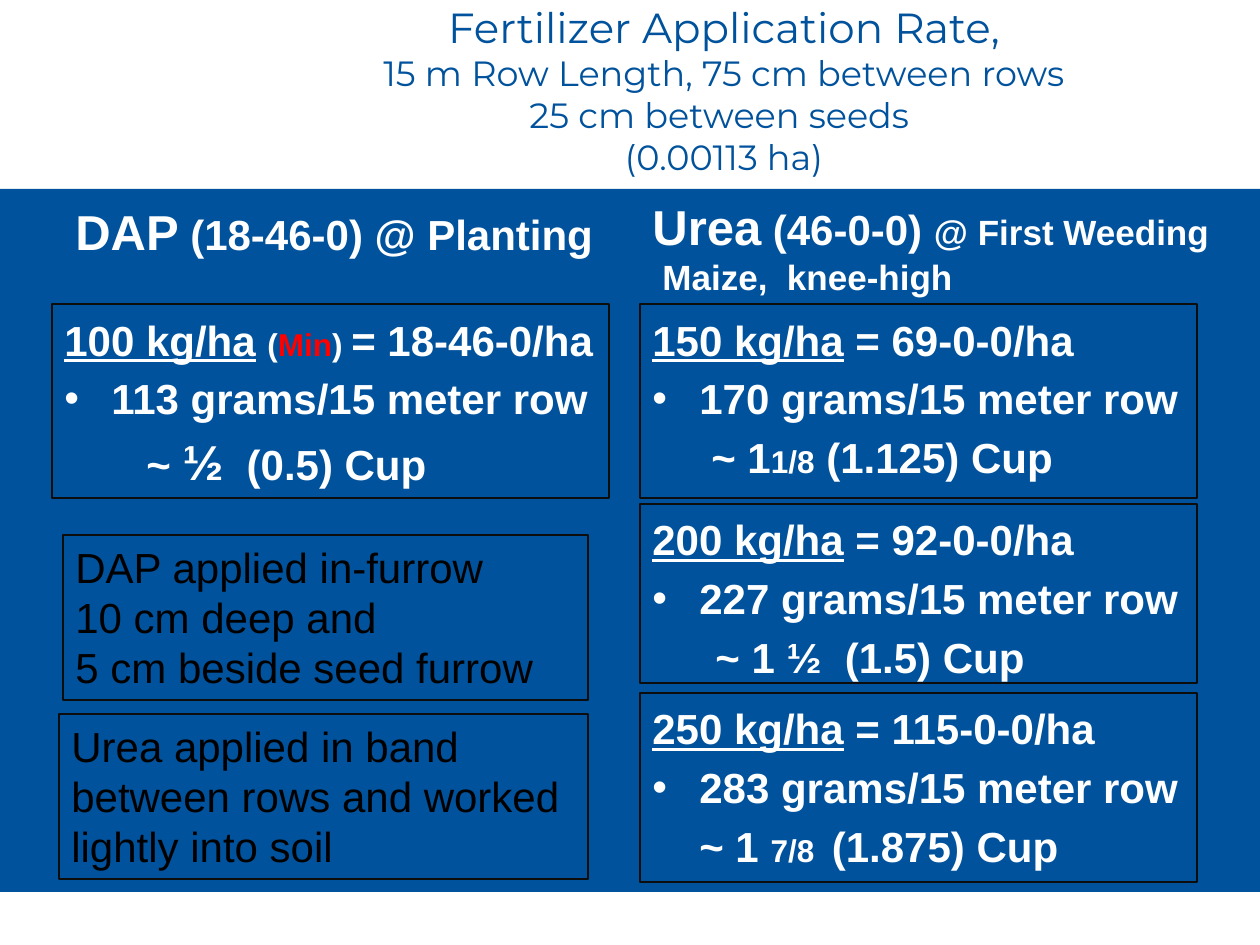
from dataclasses import dataclass

from lxml import etree
from pptx import Presentation, util as u
from pptx.dml.color import RGBColor
from pptx.enum import shapes, text
from pptx.oxml.ns import qn

PX = 914400 / 126


@dataclass(frozen=True)
class Theme:
    blue: str = "00529C"
    white: str = "FFFFFF"
    black: str = "000000"
    red: str = "FF0000"
    outline: str = "0D0D0D"
    title_font: str = "Montserrat"
    body_font: str = "Arial"
    large: int = 28
    normal: int = 24
    medium: int = 20
    small: int = 18
    gap: float = 4.8


THEME = Theme()
HANG = 47


def px(length):
    return u.Emu(round(length * PX))


def write(paragraph, wording, size=THEME.normal, color=THEME.white, **font_format):
    run = paragraph.add_run()
    run.text = wording
    run.font.color.rgb = RGBColor.from_string(color)
    font_values = {"name": THEME.body_font, "bold": True, "size": u.Pt(size)} | font_format
    for key, value in font_values.items():
        setattr(run.font, key, value)


def indent(paragraph, left, first=0, bullet=None):
    properties = paragraph._p.get_or_add_pPr()
    properties.set("marL", str(px(left)))
    properties.set("indent", str(px(first)))
    if bullet:
        color = etree.SubElement(etree.SubElement(properties, qn("a:buClr")), qn("a:srgbClr"))
        color.set("val", THEME.white)
        etree.SubElement(properties, qn("a:buFont")).set("typeface", THEME.body_font)
        etree.SubElement(properties, qn("a:buChar")).set("char", bullet)


def set_frame(frame, anchor):
    frame_values = {"word_wrap": True, "auto_size": text.MSO_AUTO_SIZE.NONE,
                    "vertical_anchor": anchor}
    for key, value in frame_values.items():
        setattr(frame, key, value)


def add_panel(slide, box, fill=None, line=None):
    panel = slide.shapes.add_shape(shapes.MSO_SHAPE.RECTANGLE, *map(px, box))
    panel.shadow.inherit = False
    if fill:
        panel.fill.solid()
        panel.fill.fore_color.rgb = RGBColor.from_string(fill)
    else:
        panel.fill.background()
    if line:
        panel.line.color.rgb = RGBColor.from_string(line)
        panel.line.width = u.Pt(0.75)
    else:
        panel.line.fill.background()
    set_frame(panel.text_frame, text.MSO_ANCHOR.TOP)
    return panel


def add_paragraphs(frame, count, gap=0):
    """Return count left-aligned paragraphs, with gap points between them."""
    paragraphs = [frame.paragraphs[0]] + [frame.add_paragraph() for _ in range(count - 1)]
    for position, paragraph in enumerate(paragraphs):
        paragraph.alignment = text.PP_ALIGN.LEFT
        paragraph.space_before = u.Pt(gap if position else 0)
    return paragraphs


def add_title(slide, box, heading, details):
    title = slide.shapes.title
    title.left, title.top, title.width, title.height = map(px, box)
    set_frame(title.text_frame, text.MSO_ANCHOR.MIDDLE)
    paragraph = title.text_frame.paragraphs[0]
    paragraph.alignment = text.PP_ALIGN.CENTER
    style = {"color": THEME.blue, "name": THEME.title_font, "bold": False}
    write(paragraph, heading, **style)
    for detail in details:
        paragraph.add_line_break()
        write(paragraph, detail, THEME.medium, **style)


def add_column_heading(slide, box, lines):
    frame = slide.shapes.add_textbox(*map(px, box)).text_frame
    set_frame(frame, text.MSO_ANCHOR.BOTTOM)
    for position, (paragraph, runs) in enumerate(zip(add_paragraphs(frame, len(lines)), lines)):
        indent(paragraph, 10 * position)
        for run in runs:
            write(paragraph, *run)


def add_rate_card(slide, box, rate, analysis, dose, cups, cup_indent):
    """Outlined card: underlined rate, bulleted dose, indented cup measure."""
    frame = add_panel(slide, box, line=THEME.outline).text_frame
    frame.margin_top = px(10)
    rate_line, dose_line, cup_line = add_paragraphs(frame, 3, THEME.gap)
    indent(rate_line, HANG, -HANG)
    write(rate_line, rate, underline=True)
    for run in analysis:
        write(rate_line, *run)
    indent(dose_line, HANG, -HANG, "•")
    write(dose_line, dose)
    indent(cup_line, cup_indent)
    for run in cups:
        write(cup_line, *run)


def add_note(slide, box, lines):
    frame = add_panel(slide, box, line=THEME.outline).text_frame
    for paragraph, line in zip(add_paragraphs(frame, len(lines)), lines):
        write(paragraph, line, color=THEME.black, bold=False)


def main():
    deck = Presentation()
    deck.slide_width, deck.slide_height = px(1260), px(945)
    slide = deck.slides.add_slide(deck.slide_layouts[5])
    left, right, card_width = 52, 640, 557

    add_panel(slide, (0, 189, 1260, 703), fill=THEME.blue)
    add_title(slide, (220, 0, 1008, 179), "Fertilizer Application Rate,",
              ["15 m Row Length, 75 cm between rows", "25 cm between seeds ", "(0.00113 ha)"])

    add_column_heading(slide, (63, 179, card_width, 88),
                       [[("DAP", THEME.large), (" (18-46-0) @ Planting",)]])
    add_column_heading(slide, (right, 168, 588, 136),
                       [[("Urea", THEME.large), (" (46-0-0) ",),
                         ("@ First Weeding", THEME.medium)],
                        [("Maize,  knee-high", THEME.medium)]])

    add_rate_card(slide, (left, 304, card_width, 194), "100 kg/ha",
                  [(" ",), ("(", THEME.small), ("Min", THEME.small, THEME.red),
                   (") ", THEME.small), ("= 18-46-0/ha",)],
                  "113 grams/15 meter row",
                  [("~ ",), ("½", THEME.large), ("  (0.5) Cup",)], 82)
    urea_cards = [
        (304, 194, "150", "69", "170", [("~ 1",), ("1/8", THEME.small), (" (1.125) Cup",)], 59),
        (504, 179, "200", "92", "227", [("~ 1 ½  (1.5) Cup",)], 63),
        (693, 189, "250", "115", "283",
         [("~ 1 ",), ("7/8  ", THEME.small), ("(1.875) Cup",)], HANG),
    ]
    for top, height, rate, nitrogen, grams, cups, cup_indent in urea_cards:
        add_rate_card(slide, (right, top, card_width, height), f"{rate} kg/ha",
                      [(f" = {nitrogen}-0-0/ha",)], f"{grams} grams/15 meter row",
                      cups, cup_indent)

    add_note(slide, (63, 535, 525, 165),
             ["DAP applied in-furrow", "10 cm deep and", "5 cm beside seed furrow"])
    add_note(slide, (59, 714, 529, 165),
             ["Urea applied in band", "between rows and worked", "lightly into soil"])
    deck.save("out.pptx")


if __name__ == "__main__":
    main()
